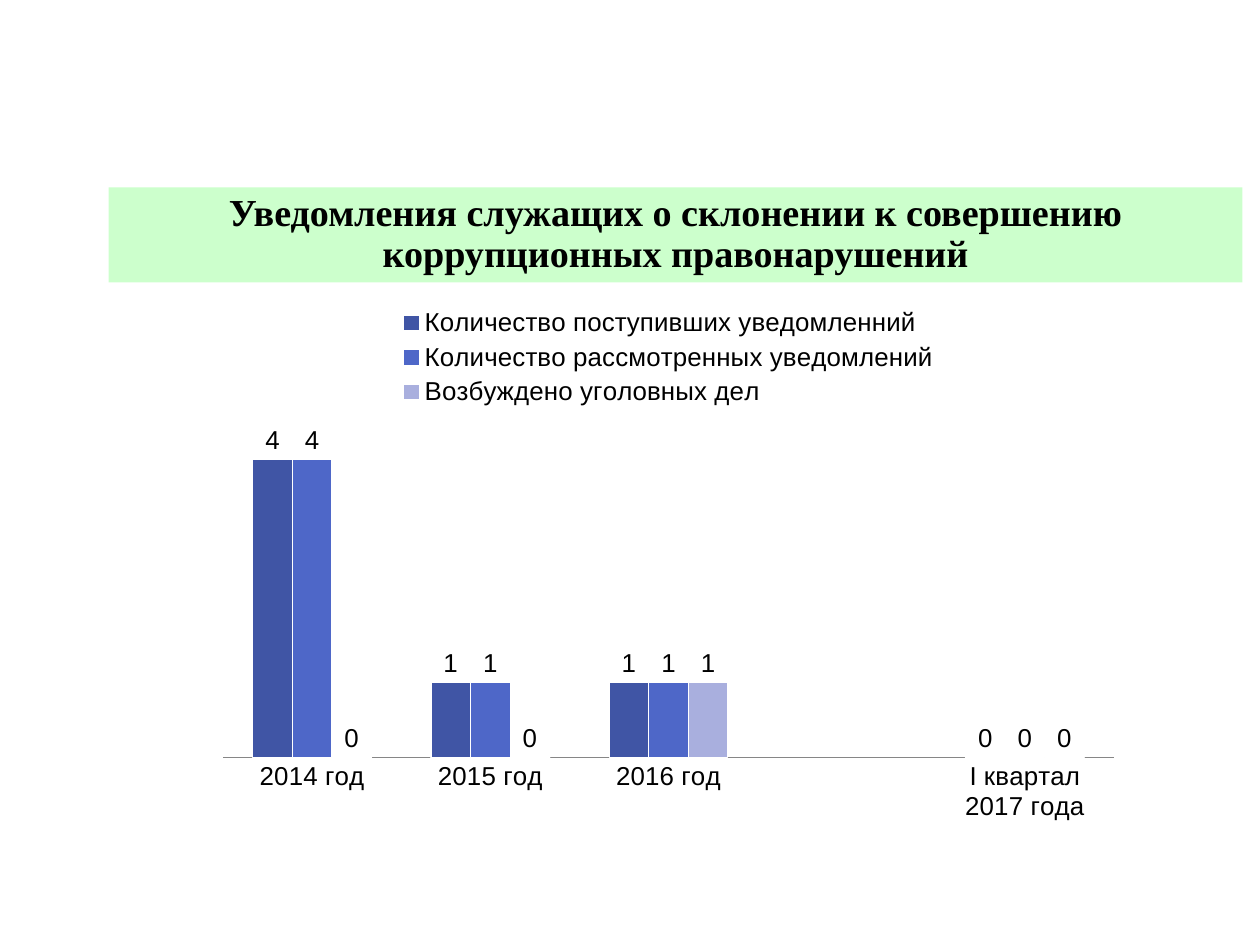
import pptx
import pptx.chart.data
import pptx.dml.color
import pptx.enum.chart
import pptx.enum.shapes
import pptx.enum.text
import pptx.oxml
import pptx.oxml.ns
import pptx.util
from pptx.util import Inches, Pt

HEADING = "Уведомления служащих о склонении к совершению коррупционных правонарушений"
PERIODS = ["2014 год", "2015 год", "2016 год", "", "I квартал 2017 года"]
COUNTS = [
    ("Количество поступивших уведомленний", (4, 1, 1, None, 0), "4055A5"),
    ("Количество рассмотренных уведомлений", (4, 1, 1, None, 0), "4E67C8"),
    ("Возбуждено уголовных дел", (0, 0, 1, None, 0), "A9AFDE"),
]
PLOT_AREA = (0.02, 0.24, 0.96, 0.62)
LEGEND_AREA = (0.21, 0.02, 0.58, 0.2)


def paint(target, color):
    target.solid()
    target.fore_color.rgb = pptx.dml.color.RGBColor.from_string(color)


def place(element, index, area, inner=False):
    for old in element.findall(pptx.oxml.ns.qn("c:layout")):
        element.remove(old)
    target = '<c:layoutTarget val="inner"/>' if inner else ""
    modes = '<c:xMode val="edge"/><c:yMode val="edge"/>'
    sizes = "".join(f'<c:{side} val="{share}"/>' for side, share in zip("xywh", area))
    element.insert(index, pptx.oxml.parse_xml(
        f'<c:layout {pptx.oxml.ns.nsdecls("c")}><c:manualLayout>'
        f"{target}{modes}{sizes}</c:manualLayout></c:layout>"))


def add_heading(slide):
    banner = slide.shapes.add_shape(
        pptx.enum.shapes.MSO_SHAPE.RECTANGLE,
        Inches(0.95), Inches(1.64), Inches(9.92), Inches(0.83))
    banner.shadow.inherit = False
    paint(banner.fill, "CCFFCC")
    banner.line.fill.background()
    frame = banner.text_frame
    frame.word_wrap = True
    frame.vertical_anchor = pptx.enum.text.MSO_ANCHOR.MIDDLE
    frame.margin_left = frame.margin_right = frame.margin_top = frame.margin_bottom = 0
    heading = frame.paragraphs[0]
    heading.text = HEADING
    heading.alignment = pptx.enum.text.PP_ALIGN.CENTER
    heading.line_spacing = 0.9
    heading.font.name = "Times New Roman"
    heading.font.size = Pt(24)
    heading.font.bold = True
    paint(heading.font.fill, "000000")


def add_notifications(slide):
    data = pptx.chart.data.CategoryChartData()
    data.categories = PERIODS
    for name, values, color in COUNTS:
        data.add_series(name, values)
    chart = slide.shapes.add_chart(
        pptx.enum.chart.XL_CHART_TYPE.COLUMN_CLUSTERED,
        Inches(1.79), Inches(2.56), Inches(8.12), Inches(4.73), data).chart
    chart.has_title = False
    chart.font.name = "Arial"
    chart.font.size = Pt(16.3)
    paint(chart.font.fill, "000000")

    chart.has_legend = True
    legend = chart.legend
    legend.position = pptx.enum.chart.XL_LEGEND_POSITION.TOP
    legend.include_in_layout = False
    place(legend._element, 1, LEGEND_AREA)
    place(chart._chartSpace.chart.plotArea, 0, PLOT_AREA, inner=True)

    counts_axis = chart.value_axis
    counts_axis.visible = False
    counts_axis.has_major_gridlines = False
    counts_axis.minimum_scale = 0
    counts_axis.maximum_scale = 4.5
    periods_axis = chart.category_axis
    periods_axis.major_tick_mark = pptx.enum.chart.XL_TICK_MARK.NONE
    paint(periods_axis.format.line.fill, "868686")
    periods_axis.format.line.width = Pt(0.25)

    plot = chart.plots[0]
    plot.gap_width = 150
    plot.overlap = 0
    plot.vary_by_categories = False
    for series, (name, values, color) in zip(plot.series, COUNTS):
        paint(series.format.fill, color)
        paint(series.format.line.fill, "FFFFFF")
        series.format.line.width = Pt(0.75)
        series.invert_if_negative = False
        series.data_labels.show_value = True
        series.data_labels.position = pptx.enum.chart.XL_LABEL_POSITION.OUTSIDE_END


def main():
    deck = pptx.Presentation()
    deck.slide_width = pptx.util.Emu(10080625)
    deck.slide_height = pptx.util.Emu(7559675)
    slide = deck.slides.add_slide(deck.slide_layouts[6])
    add_heading(slide)
    add_notifications(slide)
    deck.save("out.pptx")


if __name__ == "__main__":
    main()
